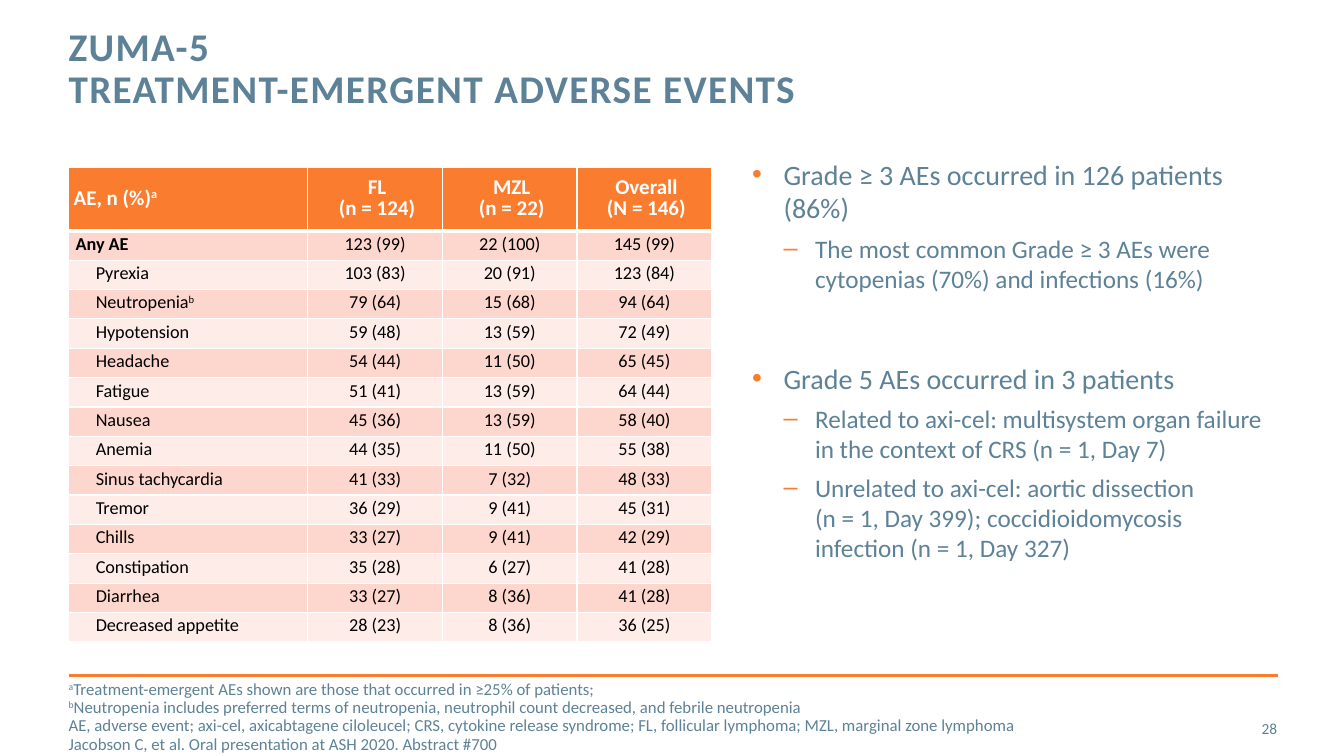
"""Build the ZUMA-5 treatment-emergent adverse events slide."""
from lxml import etree
from pptx import Presentation
from pptx.dml.color import RGBColor
from pptx.enum.shapes import MSO_CONNECTOR
from pptx.enum.text import MSO_ANCHOR, PP_ALIGN
from pptx.oxml.ns import qn
from pptx.util import Pt

STRAIGHT = MSO_CONNECTOR.STRAIGHT
TOP, MIDDLE = MSO_ANCHOR.TOP, MSO_ANCHOR.MIDDLE
LEFT, CENTER, RIGHT = PP_ALIGN.LEFT, PP_ALIGN.CENTER, PP_ALIGN.RIGHT
COLORS = {"slate": "5D8298", "orange": "FA7C2E", "white": "FFFFFF",
          "black": "000000", "rose": "FDD7CD", "blush": "FEECE8"}
MARGIN = 49


def write(para, text, size, color, bold=False):
    """Fill a paragraph; text between carets becomes superscript."""
    for index, piece in enumerate(text.split("^")):
        if index % 2:
            span = para.add_run()
            span.text = piece
            span.font._element.set("baseline", "30000")
        elif piece:
            for number, line in enumerate(piece.split("\n")):
                if number:
                    para.add_line_break()
                para.add_run().text = line
    for span in para.runs:
        span.font.name = "Calibri"
        span.font.size = Pt(size)
        span.font.bold = bold
        span.font.color.rgb = RGBColor.from_string(COLORS[color])


def add_text(left, top, width, height, lines, anchor=TOP, bold=False):
    """Add a text box without margins, one paragraph per (text, size)."""
    box = page.shapes.add_textbox(Pt(left), Pt(top), Pt(width), Pt(height))
    frame = box.text_frame
    frame.word_wrap = True
    frame.vertical_anchor = anchor
    frame.margin_left = frame.margin_right = 0
    frame.margin_top = frame.margin_bottom = 0
    for index, (text, size) in enumerate(lines):
        para = frame.add_paragraph() if index else frame.paragraphs[0]
        write(para, text, size, "slate", bold)
    return frame.paragraphs


deck = Presentation()
deck.slide_width, deck.slide_height = Pt(960), Pt(540)
page = deck.slides.add_slide(deck.slide_layouts[6])

rule = page.shapes.add_connector(STRAIGHT, Pt(MARGIN), Pt(482.4), Pt(913), Pt(482.4))
rule.line.color.rgb = RGBColor.from_string(COLORS["orange"])
rule.line.width = Pt(2)
etree.SubElement(rule._element.spPr, qn("a:effectLst"))

title = add_text(MARGIN, 19.4, 830, 63.4,
                 [("ZUMA-5\nTREATMENT-EMERGENT ADVERSE EVENTS", 28)], bold=True)[0]
title.line_spacing = Pt(30)
for span in title.runs:
    span.font._element.set("spc", "100")

findings = [
    (0, 0, "Grade ≥ 3 AEs occurred in 126 patients (86%)"),
    (1, 6, "The most common Grade ≥ 3 AEs were cytopenias (70%) and infections (16%)"),
    (0, 48.4, "Grade 5 AEs occurred in 3 patients"),
    (1, 6, "Related to axi-cel: multisystem organ failure in the context of CRS (n = 1, Day 7)"),
    (1, 6, "Unrelated to axi-cel: aortic dissection\n(n = 1, Day 399); coccidioidomycosis\n"
           "infection (n = 1, Day 327)"),
]
paras = add_text(537.2, 112.3, 375, 356.4,
                 [(text, 18 if level else 20) for level, gap, text in findings])
for para, (level, gap, text) in zip(paras, findings):
    para.level = level
    para.space_before = Pt(gap)
    props = para._p.get_or_add_pPr()
    props.set("marL", str(Pt(22.5 * (level + 1))))
    props.set("indent", str(Pt(-22.5)))
    bullet_color = etree.SubElement(props, qn("a:buClr"))
    etree.SubElement(bullet_color, qn("a:srgbClr"), val=COLORS["orange"])
    etree.SubElement(props, qn("a:buFont"), typeface="Arial")
    etree.SubElement(props, qn("a:buChar"), char="–" if level else "•")

footnotes = [
    "^a^Treatment-emergent AEs shown are those that occurred in ≥25% of patients;",
    "^b^Neutropenia includes preferred terms of neutropenia, neutrophil count decreased, "
    "and febrile neutropenia",
    "AE, adverse event; axi-cel, axicabtagene ciloleucel; CRS, cytokine release syndrome; "
    "FL, follicular lymphoma; MZL, marginal zone lymphoma",
    "Jacobson C, et al. Oral presentation at ASH 2020. Abstract #700",
]
for para in add_text(MARGIN, 486, 790, 53, [(note, 12) for note in footnotes], MIDDLE):
    para.line_spacing = 0.9

add_text(850.3, 506.2, 62, 28.8, [("28", 11)], MIDDLE)[0].alignment = RIGHT

events = [
    ("AE, n (%)^a^", "FL\n(n = 124)", "MZL\n(n = 22)", "Overall\n(N = 146)"),
    ("Any AE", "123 (99)", "22 (100)", "145 (99)"),
    ("Pyrexia", "103 (83)", "20 (91)", "123 (84)"),
    ("Neutropenia^b^", "79 (64)", "15 (68)", "94 (64)"),
    ("Hypotension", "59 (48)", "13 (59)", "72 (49)"),
    ("Headache", "54 (44)", "11 (50)", "65 (45)"),
    ("Fatigue", "51 (41)", "13 (59)", "64 (44)"),
    ("Nausea", "45 (36)", "13 (59)", "58 (40)"),
    ("Anemia", "44 (35)", "11 (50)", "55 (38)"),
    ("Sinus tachycardia", "41 (33)", "7 (32)", "48 (33)"),
    ("Tremor", "36 (29)", "9 (41)", "45 (31)"),
    ("Chills", "33 (27)", "9 (41)", "42 (29)"),
    ("Constipation", "35 (28)", "6 (27)", "41 (28)"),
    ("Diarrhea", "33 (27)", "8 (36)", "41 (28)"),
    ("Decreased appetite", "28 (23)", "8 (36)", "36 (25)"),
]
table = page.shapes.add_table(len(events), 4, Pt(MARGIN), Pt(119.5),
                              Pt(459.4), Pt(339.3)).table
for index, column in enumerate(table.columns):
    column.width = Pt(96.2 if index else 170.8)
for index, row in enumerate(table.rows):
    row.height = Pt(21 if index else 45.3)

for row, values in enumerate(events):
    header = row == 0
    for col, value in enumerate(values):
        cell = table.cell(row, col)
        cell.margin_top = cell.margin_bottom = 0
        cell.margin_left = Pt(3.6 if header else 5)
        cell.margin_right = Pt(5 if not header else 0.7 if col else 9.4)
        cell.vertical_anchor = MIDDLE if header else TOP
        frame = cell.text_frame
        for index, text in enumerate(value.split("\n")):
            para = frame.add_paragraph() if index else frame.paragraphs[0]
            para.alignment = CENTER if col else LEFT
            para.line_spacing = 0.8 if header else 1.1
            if row > 1 and col == 0:
                para._p.get_or_add_pPr().set("marL", str(Pt(14.4)))
            write(para, text, 15 if header else 13, "white" if header else "black",
                  header or (row == 1 and col == 0))
        props = cell._tc.get_or_add_tcPr()
        for side in "LRTB":
            thick = (header and side == "B") or (row == 1 and side == "T")
            border = etree.SubElement(props, qn("a:ln" + side), w=str(Pt(3 if thick else 1)))
            paint = etree.SubElement(border, qn("a:solidFill"))
            etree.SubElement(paint, qn("a:srgbClr"), val=COLORS["white"])
        cell.fill.solid()
        shade = "orange" if header else "rose" if row % 2 else "blush"
        cell.fill.fore_color.rgb = RGBColor.from_string(COLORS[shade])

deck.save("out.pptx")
